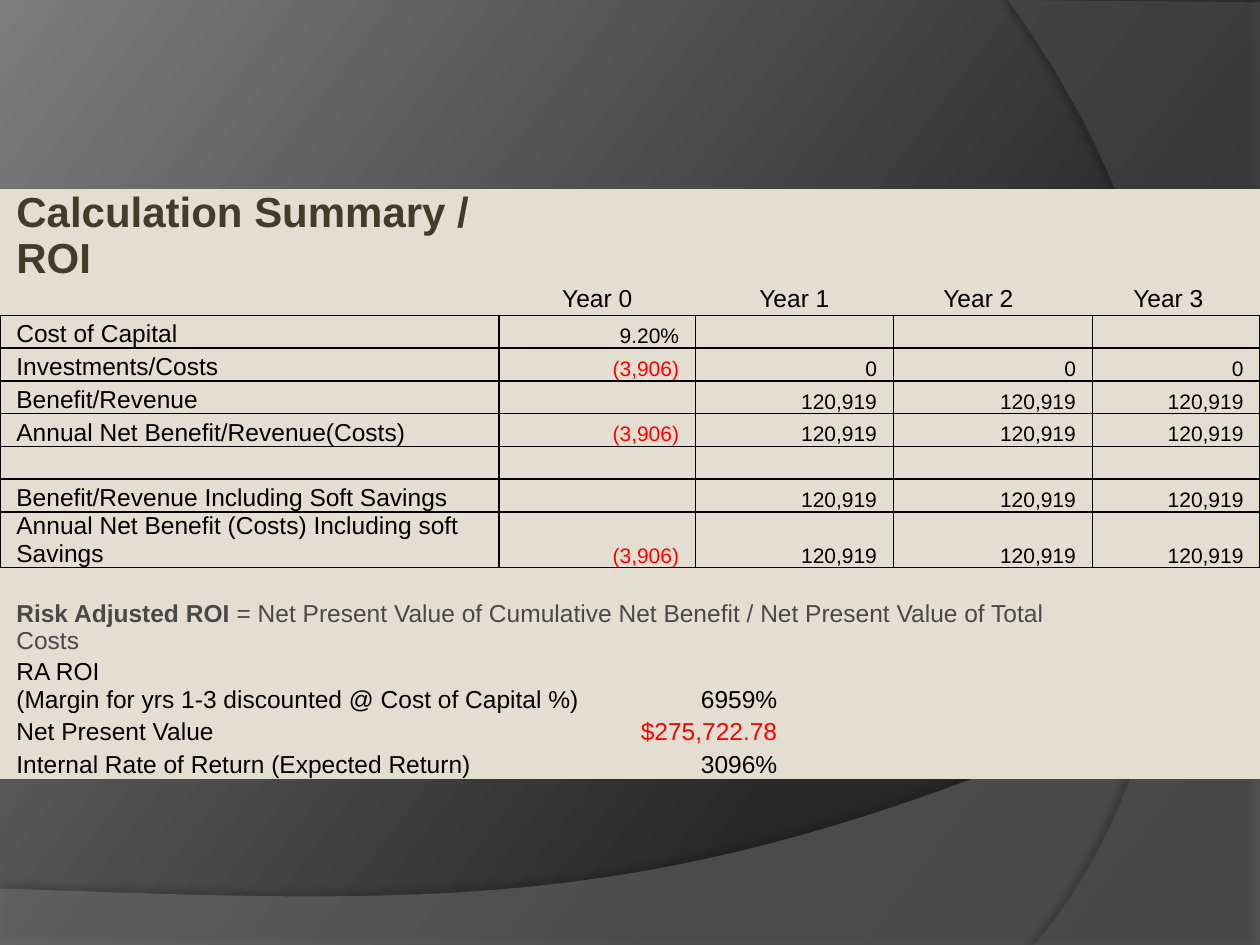
"""Build the calculation summary and ROI slide."""
from copy import deepcopy

from lxml import etree
from pptx import Presentation
from pptx.dml.color import RGBColor
from pptx.enum import text as t
from pptx.oxml import ns
from pptx.util import Cm, Pt

BLACK = RGBColor(0x00, 0x00, 0x00)
RED = RGBColor(0xFF, 0x00, 0x00)
BROWN = RGBColor(0x44, 0x3C, 0x29)
GREY = RGBColor(0x49, 0x49, 0x49)
SAND = RGBColor(0xE3, 0xDE, 0xD1)
BACKDROP = [
    (0, RGBColor(0x22, 0x22, 0x22)),
    (0.3, RGBColor(0x28, 0x28, 0x28)),
    (1, RGBColor(0x7C, 0x7C, 0x7C)),
]
LEFT, CENTER, RIGHT = t.PP_ALIGN.LEFT, t.PP_ALIGN.CENTER, t.PP_ALIGN.RIGHT

WAVES = [
    {
        "corners": [(0, 17.91), (0, 19.05), (25.4, 19.05), (25.4, 13.21)],
        "curve": [(14.2, 18.52), (9.93, 18.26), (0, 17.91)],
        "color": RGBColor(0x7F, 0x7F, 0x7F), "alpha": 45,
        "shadow": {"alpha": 35, "distance": 3.5, "angle": 270},
    },
    {
        "corners": [(25.4, 0.05), (25.4, 19.05), (20.85, 19.05)],
        "curve": [(23.75, 15.72), (25.86, 7.62), (20.32, 0)],
        "color": RGBColor(0x5E, 0x5E, 0x5E), "alpha": 40,
        "shadow": {"alpha": 45, "distance": 4, "angle": 180},
    },
]

COLUMNS = [10.06, 1.98, 1.98, 1.98, 2.01, 1.93, 1.5, 0.58, 3.38]
HEIGHTS = [1.88] + [0.66] * 7 + [1.12, 1.77, 1.17, 0.66, 0.66]
SPANS = {
    "title": [1, 2, 2, 2, 2],
    "header": [1, 2, 2, 2, 2],
    "grid": [1, 2, 2, 3, 1],
    "note": [7, 2],
    "result": [2, 2, 2, 1, 2],
}
BORDERS = {"header": "B", "grid": "LRTB", "note": "T"}
STYLES = {
    "title": {"size": Pt(24), "bold": True, "color": BROWN},
    "label": {"size": Pt(14), "bold": False, "color": BLACK},
    "figure": {"size": Pt(12), "bold": False, "color": BLACK},
    "loss": {"size": Pt(12), "bold": False, "color": RED},
    "value": {"size": Pt(14), "bold": False, "color": RED},
    "term": {"size": Pt(14), "bold": True, "color": GREY},
    "formula": {"size": Pt(14), "bold": False, "color": GREY},
}
GAINS = ["120,919"] * 3
ROWS = [
    ("title", ["Calculation Summary / ROI"]),
    ("header", ["", "Year 0", "Year 1", "Year 2", "Year 3"]),
    ("grid", ["Cost of Capital", "9.20%"]),
    ("grid", ["Investments/Costs", "(3,906)", "0", "0", "0"]),
    ("grid", ["Benefit/Revenue", "", *GAINS]),
    ("grid", ["Annual Net Benefit/Revenue(Costs)", "(3,906)", *GAINS]),
    ("grid", []),
    ("grid", ["Benefit/Revenue Including Soft Savings", "", *GAINS]),
    ("grid", ["Annual Net Benefit (Costs) Including soft Savings", "(3,906)", *GAINS]),
    ("note", [[
        ("Risk Adjusted ROI", "term"),
        (" = Net Present Value of Cumulative Net Benefit / Net Present Value of Total Costs",
         "formula"),
    ]]),
    ("result", ["RA ROI\n(Margin for yrs 1-3 discounted @ Cost of Capital %)", "6959%"]),
    ("result", ["Net Present Value", "$275,722.78"]),
    ("result", ["Internal Rate of Return (Expected Return)", "3096%"]),
]


def add_child(parent, tag, **values):
    attributes = {name: str(value) for name, value in values.items()}
    return etree.SubElement(parent, ns.qn("a:" + tag), attributes)


def paint_backdrop(page):
    fill = page.background.fill
    fill.gradient()
    fill.gradient_angle = 143
    stops = page.element.find(".//" + ns.qn("a:gsLst"))
    stops.append(deepcopy(stops[-1]))
    for stop, (position, color) in zip(fill.gradient_stops, BACKDROP):
        stop.position = position
        stop.color.rgb = color


def bezier(points, steps=60):
    for step in range(1, steps + 1):
        f = step / steps
        weights = ((1 - f) ** 3, 3 * f * (1 - f) ** 2, 3 * f * f * (1 - f), f ** 3)
        yield tuple(sum(w * p[axis] for w, p in zip(weights, points)) for axis in (0, 1))


def add_wave(page, wave):
    corners = wave["corners"]
    outline = corners + list(bezier([corners[-1], *wave["curve"]]))
    points = [(Cm(x), Cm(y)) for x, y in outline]
    builder = page.shapes.build_freeform(*points[0])
    builder.add_line_segments(points[1:], close=True)
    shape = builder.convert_to_shape()
    shape.fill.solid()
    shape.fill.fore_color.rgb = wave["color"]
    shape.line.fill.background()
    shape.shadow.inherit = False
    properties = shape.element.spPr
    tint = properties.find(ns.qn("a:solidFill"))[0]
    add_child(tint, "alpha", val=wave["alpha"] * 1000)
    shadow = wave["shadow"]
    effect = add_child(
        properties.find(ns.qn("a:effectLst")), "outerShdw", blurRad=Pt(4),
        dist=Pt(shadow["distance"]), dir=shadow["angle"] * 60000, rotWithShape=0)
    add_child(add_child(effect, "srgbClr", val=BLACK), "alpha", val=shadow["alpha"] * 1000)


def choose_style(kind, index, words):
    if kind == "title":
        return "title"
    if kind == "grid" and index:
        return "loss" if words.startswith("(") else "figure"
    return "value" if words.startswith("$") else "label"


def format_cell(cell, sides):
    properties = cell._tc.get_or_add_tcPr()
    for side in "LRTB":
        line = add_child(properties, "ln" + side, w=Pt(1))
        if side in sides:
            add_child(add_child(line, "solidFill"), "srgbClr", val=BLACK)
        else:
            add_child(line, "noFill")
    cell.fill.solid()
    cell.fill.fore_color.rgb = SAND
    for edge, gap in {"left": 0.33, "right": 0.33, "top": 0, "bottom": 0}.items():
        setattr(cell, "margin_" + edge, Cm(gap))
    add_child(cell.text_frame.paragraphs[0]._p, "endParaRPr", sz=1200)


def write_cell(cell, kind, index, content):
    header = kind == "header"
    cell.vertical_anchor = t.MSO_ANCHOR.MIDDLE if header else t.MSO_ANCHOR.BOTTOM
    if isinstance(content, str):
        style = choose_style(kind, index, content)
        lines = [[(line, style)] for line in content.split("\n")]
    else:
        lines = [content]
    box = cell.text_frame
    for number, spans in enumerate(lines):
        para = box.add_paragraph() if number else box.paragraphs[0]
        para.alignment = CENTER if header else RIGHT if index else LEFT
        for words, style in spans:
            span = para.add_run()
            span.text = words
            span.font.name = "Arial"
            for name, value in STYLES[style].items():
                if name == "color":
                    span.font.color.rgb = value
                else:
                    setattr(span.font, name, value)


def add_summary(page):
    frame = page.shapes.add_table(
        len(ROWS), len(COLUMNS), 0, Cm(3.81), Cm(sum(COLUMNS)), Cm(sum(HEIGHTS)))
    table = frame.table
    table.first_row = table.horz_banding = False
    for column, width in zip(table.columns, COLUMNS):
        column.width = Cm(width)
    for row, (kind, contents) in enumerate(ROWS):
        table.rows[row].height = Cm(HEIGHTS[row])
        for column in range(len(COLUMNS)):
            format_cell(table.cell(row, column), BORDERS.get(kind, ""))
        start = 0
        for index, span in enumerate(SPANS[kind]):
            cell = table.cell(row, start)
            if span > 1:
                cell.merge(table.cell(row, start + span - 1))
            if index < len(contents) and contents[index]:
                write_cell(cell, kind, index, contents[index])
            start += span
    table.cell(1, 7).margin_left = Cm(0.6)


def main():
    deck = Presentation()
    deck.slide_width, deck.slide_height = Cm(25.4), Cm(19.05)
    page = deck.slides.add_slide(deck.slide_layouts[6])
    paint_backdrop(page)
    for wave in WAVES:
        add_wave(page, wave)
    add_summary(page)
    deck.save("out.pptx")


if __name__ == "__main__":
    main()
